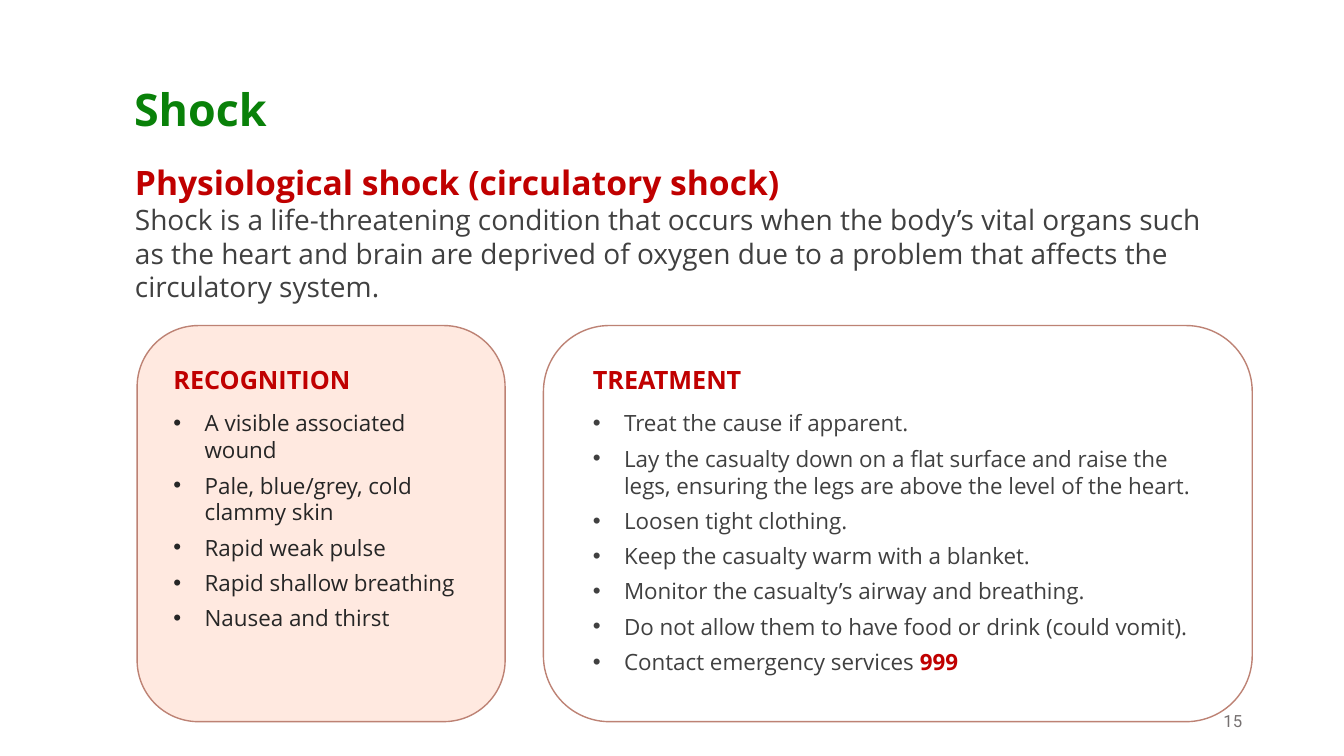
from lxml import etree
from pptx import Presentation, util as u
from pptx.dml.color import RGBColor
from pptx.enum import shapes, text
from pptx.oxml import ns

GREEN, RED, GREY, DARK = "098109", "C00000", "404040", "262626"
PINK, WHITE, OUTLINE, PALE_GREY = "FFE9E0", "FFFFFF", "BD8274", "767171"
FONT = "Open Sans"
CARD_TOP, CARD_HEIGHT = 3.23, 3.93
LIST_TOP = CARD_TOP + 0.33
INDENT = u.Inches(0.31)

RECOGNITION = [
    "A visible associated wound",
    "Pale, blue/grey, cold clammy skin",
    "Rapid weak pulse",
    "Rapid shallow breathing",
    "Nausea and thirst",
]
TREATMENT = [
    "Treat the cause if apparent.",
    "Lay the casualty down on a flat surface and raise the legs, "
    "ensuring the legs are above the level of the heart.",
    "Loosen tight clothing.",
    "Keep the casualty warm with a blanket.",
    "Monitor the casualty’s airway and breathing.",
    "Do not allow them to have food or drink (could vomit).",
    "Contact emergency services ",
]


def color(value):
    return RGBColor.from_string(value)


def place(shape, box):
    shape.left, shape.top, shape.width, shape.height = map(u.Inches, box)


def prepare_frame(shape, anchor=text.MSO_ANCHOR.TOP):
    frame = shape.text_frame
    frame.word_wrap = True
    frame.auto_size = text.MSO_AUTO_SIZE.NONE
    frame.vertical_anchor = anchor
    return frame


def style(paragraph, size, ink, bold=False, font=FONT, align=text.PP_ALIGN.LEFT):
    paragraph.alignment = align
    paragraph.space_before = u.Pt(0)
    paragraph.font.name, paragraph.font.size = font, u.Pt(size)
    paragraph.font.bold = bold
    paragraph.font.color.rgb = color(ink)


def set_bullet(paragraph, character=None):
    """Gives the paragraph a hanging bullet, or removes the inherited one."""
    properties = paragraph._p.get_or_add_pPr()
    properties.set("marL", str(INDENT if character else 0))
    properties.set("indent", str(-INDENT if character else 0))
    tag = "a:buChar" if character else "a:buNone"
    bullet = etree.Element(ns.qn(tag))
    if character:
        bullet.set("char", character)
    # Bullets come before the default run properties
    properties.find(ns.qn("a:defRPr")).addprevious(bullet)


def add_title(slide, box):
    title = slide.shapes.title
    place(title, box)
    frame = prepare_frame(title)
    frame.text = "Shock"
    style(frame.paragraphs[0], 32, GREEN, bold=True)


def add_intro(slide, box):
    frame = prepare_frame(slide.shapes.add_textbox(*map(u.Inches, box)))
    heading, definition = frame.paragraphs[0], frame.add_paragraph()
    heading.text = "Physiological shock (circulatory shock)"
    style(heading, 24, RED, bold=True)
    definition.text = (
        "Shock is a life-threatening condition that occurs when the body’s "
        "vital organs such as the heart and brain are deprived of oxygen due "
        "to a problem that affects the circulatory system."
    )
    style(definition, 20, GREY)


def add_card(slide, box, fill, placeholder, list_box, heading, items, ink):
    # Rounded panel
    card = slide.shapes.add_shape(
        shapes.MSO_SHAPE.ROUNDED_RECTANGLE, *map(u.Inches, box))
    card.shadow.inherit = False
    card.fill.solid()
    card.fill.fore_color.rgb = color(fill)
    card.line.color.rgb = color(OUTLINE)
    card.line.width = u.Pt(1)

    # List, brought in front of its panel
    slide.shapes.element.append(placeholder.element)
    place(placeholder, list_box)
    frame = prepare_frame(placeholder)
    title = frame.paragraphs[0]
    title.text = heading
    style(title, 18, RED, bold=True)
    title.space_after = u.Pt(11)
    set_bullet(title)
    for item in items:
        paragraph = frame.add_paragraph()
        paragraph.text = item
        style(paragraph, 16, ink)
        paragraph.space_after = u.Pt(6)
        set_bullet(paragraph, "•")
    return frame


def add_page_number(slide, box):
    shape = slide.shapes.add_textbox(*map(u.Inches, box))
    paragraph = prepare_frame(shape, text.MSO_ANCHOR.MIDDLE).paragraphs[0]
    paragraph.text = "15"
    style(paragraph, 12, PALE_GREY, font="Roboto", align=text.PP_ALIGN.RIGHT)


def main():
    presentation = Presentation()
    presentation.slide_width = u.Inches(13.33)
    presentation.slide_height = u.Inches(7.5)
    two_content = presentation.slide_layouts[3]
    slide = presentation.slides.add_slide(two_content)
    left_list, right_list = slide.placeholders[1], slide.placeholders[2]

    add_page_number(slide, (9.42, 6.95, 3, 0.4))
    add_title(slide, (1.23, 0.76, 1.9, 0.64))
    add_intro(slide, (1.24, 1.56, 11.07, 1.51))
    add_card(slide, (1.36, CARD_TOP, 3.65, CARD_HEIGHT), PINK, left_list,
             (1.62, LIST_TOP, 3.17, 3.13), "RECOGNITION", RECOGNITION, DARK)
    treatment = add_card(
        slide, (5.39, CARD_TOP, 7.03, CARD_HEIGHT), WHITE, right_list,
        (5.78, LIST_TOP, 6.36, 3.21), "TREATMENT", TREATMENT, GREY)

    # Emergency number stands out at the end of the last step
    number = treatment.paragraphs[-1].add_run()
    number.text = "999"
    number.font.bold = True
    number.font.color.rgb = color(RED)

    presentation.save("out.pptx")


if __name__ == "__main__":
    main()
